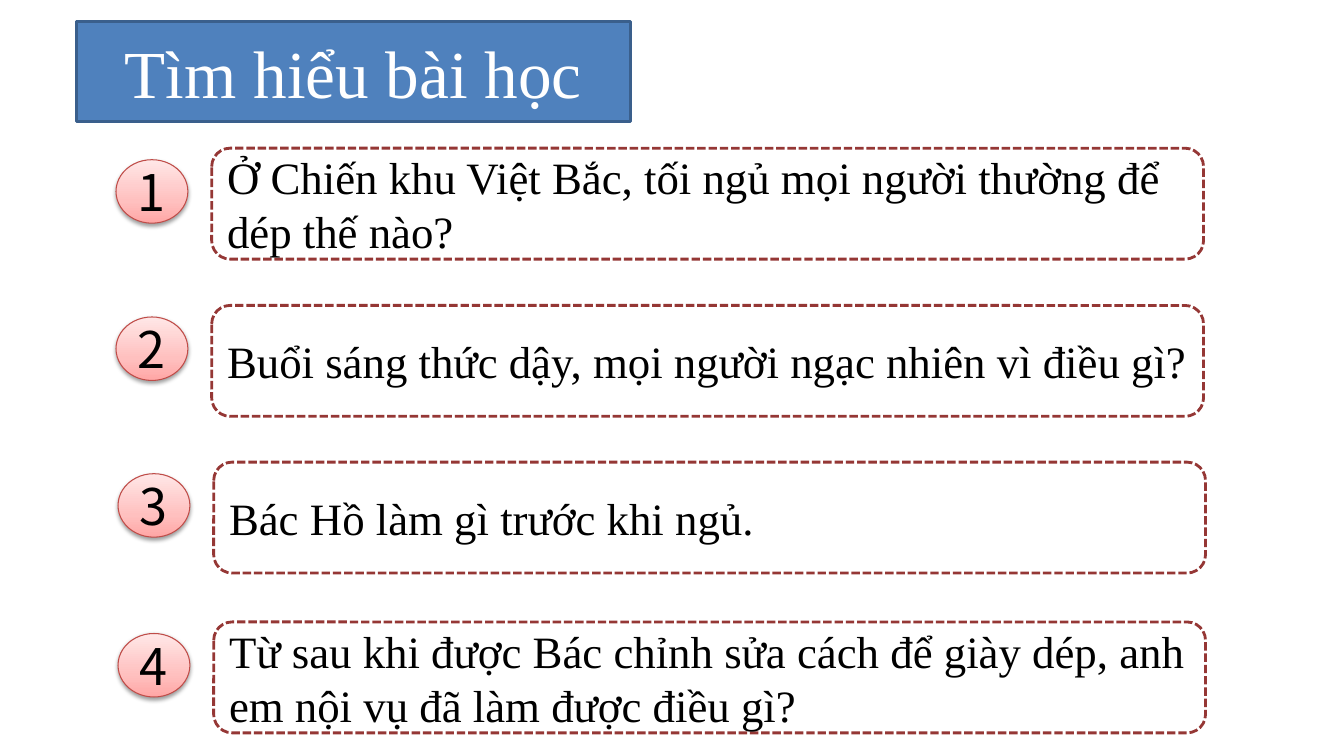
from dataclasses import dataclass

from lxml.etree import SubElement
from pptx import Presentation
from pptx.dml.color import RGBColor
from pptx.enum.dml import MSO_LINE_DASH_STYLE as Dash
from pptx.enum.shapes import MSO_SHAPE as Preset
from pptx.enum.text import MSO_ANCHOR as Anchor, PP_ALIGN as Align
from pptx.oxml.ns import qn
from pptx.shapes.autoshape import Shape
from pptx.slide import Slide
from pptx.util import Inches, Pt

SLIDE_WIDTH, SLIDE_HEIGHT = Inches(13.33), Inches(7.5)
# Grid: 100 columns by 100 rows
COLUMN, ROW = SLIDE_WIDTH / 100, SLIDE_HEIGHT / 100

COLOURS = {
    "title fill": "4F81BD", "title line": "3A5F8C", "title text": "FFFFFF",
    "box fill": "FFFFFF", "box line": "953735", "text": "000000",
    "badge line": "BF4C48", "shadow": "000000",
}
BADGE_STOPS = {0: "FFA6A5", 35: "FFC0BF", 100: "FFE7E7"}
SERIF, SANS = "Times New Roman", "Noto Sans CJK SC"


@dataclass
class Area:
    left: float
    top: float
    width: float
    height: float


@dataclass
class Style:
    preset: Preset
    line_colour: str
    line: dict
    font: dict
    text_colour: str
    alignment: Align
    fill: str | None = None


@dataclass
class Question:
    left: float
    top: float
    text: str


TITLE = Style(Preset.RECTANGLE, "title line", {"width": Pt(2)},
              {"name": SERIF, "size": Pt(48)}, "title text", Align.CENTER, "title fill")
BADGE = Style(Preset.OVAL, "badge line", {"width": Pt(0.75)},
              {"name": SANS, "size": Pt(36)}, "text", Align.CENTER)
BOX = Style(Preset.ROUNDED_RECTANGLE, "box line",
            {"width": Pt(2), "dash_style": Dash.SQUARE_DOT},
            {"name": SERIF, "size": Pt(32)}, "text", Align.LEFT, "box fill")

QUESTIONS = [
    Question(15.75, 19.6, "Ở Chiến khu Việt Bắc, tối ngủ mọi người thường để dép thế nào?"),
    Question(15.75, 40.4, "Buổi sáng thức dậy, mọi người ngạc nhiên vì điều gì?"),
    Question(15.9, 61.13, "Bác Hồ làm gì trước khi ngủ."),
    Question(15.9, 82.27, "Từ sau khi được Bác chỉnh sửa cách để giày dép, "
                          "anh em nội vụ đã làm được điều gì?"),
]


def colour(name: str) -> RGBColor:
    return RGBColor.from_string(COLOURS[name])


def apply_format(target: object, values: dict) -> None:
    for name, value in values.items():
        setattr(target, name, value)


def add_panel(slide: Slide, area: Area, style: Style, text: str) -> Shape:
    shape = slide.shapes.add_shape(
        style.preset, round(area.left * COLUMN), round(area.top * ROW),
        round(area.width * COLUMN), round(area.height * ROW))
    shape.shadow.inherit = False
    if style.fill:
        shape.fill.solid()
        shape.fill.fore_color.rgb = colour(style.fill)
    shape.line.color.rgb = colour(style.line_colour)
    apply_format(shape.line, style.line)
    frame = shape.text_frame
    apply_format(frame, {"word_wrap": True, "vertical_anchor": Anchor.MIDDLE})
    paragraph = frame.paragraphs[0]
    paragraph.alignment = style.alignment
    run = paragraph.add_run()
    run.text = text
    apply_format(run.font, style.font)
    run.font.color.rgb = colour(style.text_colour)
    return shape


def add_badge(slide: Slide, area: Area, number: int) -> None:
    shape = add_panel(slide, area, BADGE, str(number))
    # Gradient running upwards
    shape.fill.gradient()
    shape.fill.gradient_angle = 90
    properties = shape.element.spPr
    stops = properties.find(f"{qn('a:gradFill')}/{qn('a:gsLst')}")
    for stop in list(stops):
        stops.remove(stop)
    for position, value in BADGE_STOPS.items():
        stop = SubElement(stops, qn("a:gs"), pos=str(position * 1000))
        SubElement(stop, qn("a:srgbClr"), val=value)
    # Soft shadow below
    shadow = SubElement(properties.find(qn("a:effectLst")), qn("a:outerShdw"),
                        blurRad=str(Pt(3.1)), dist=str(Pt(1.6)),
                        dir="5400000", rotWithShape="0")
    tint = SubElement(shadow, qn("a:srgbClr"), val=COLOURS["shadow"])
    SubElement(tint, qn("a:alpha"), val="38000")


def main() -> None:
    presentation = Presentation()
    apply_format(presentation, {"slide_width": SLIDE_WIDTH, "slide_height": SLIDE_HEIGHT})
    slide = presentation.slides.add_slide(presentation.slide_layouts[6])

    # Title
    add_panel(slide, Area(5.7, 2.8, 41.2, 13.33), TITLE, "Tìm hiểu bài học")

    # Numbered questions
    for number, question in enumerate(QUESTIONS, start=1):
        add_badge(slide, Area(question.left - 7.12, question.top + 1.53, 5.35, 8.4), number)
        add_panel(slide, Area(question.left, question.top, 73.8, 14.67), BOX, question.text)

    presentation.save("out.pptx")


if __name__ == "__main__":
    main()
